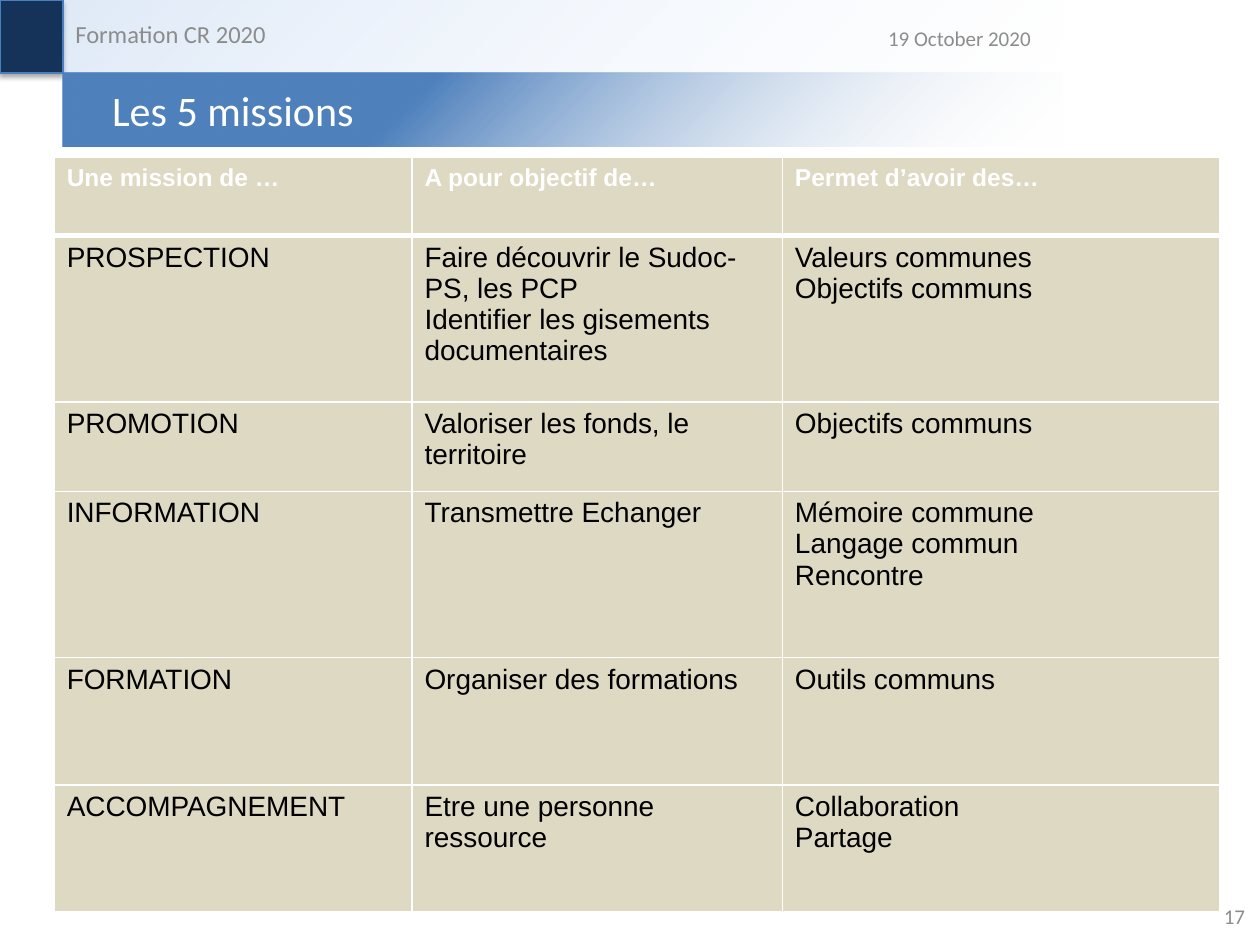
from dataclasses import dataclass

from pptx import Presentation
from pptx.dml.color import RGBColor
from pptx.enum.shapes import MSO_SHAPE
from pptx.enum.text import MSO_ANCHOR, PP_ALIGN
from pptx.oxml import parse_xml
from pptx.oxml.ns import nsdecls, qn
from pptx.util import Inches, Pt


@dataclass(frozen=True)
class Theme:
    heading_font: str = "Calibri"
    table_font: str = "Arial"
    white: str = "FFFFFF"
    black: str = "000000"
    grey: str = "8C8C8C"
    navy: str = "153258"
    outline: str = "4B7EBC"
    sand: str = "DDD9C3"
    title_size: int = 24
    body_size: int = 16
    label_size: int = 14
    small_size: int = 12


THEME = Theme()
BANNER_STOPS = [(0, "A4C4FF", 0), (100, "3F80CE", 17)]
TITLE_STOPS = [(0, "FFFFFF", 0), (65, "4F81BD", 100)]

TITLE = "Les 5 missions"
LABELS = [
    ("19 October 2020", (6.67, 0.1, 1.61, 0.4), THEME.small_size, PP_ALIGN.RIGHT),
    ("Formation CR 2020", (0.5, 0, 4.77, 0.54), THEME.label_size, PP_ALIGN.LEFT),
    ("17", (9.5, 7.07, 0.48, 0.4), THEME.small_size, PP_ALIGN.RIGHT),
]
MISSIONS = [
    ("Une mission de …", "A pour objectif de…", "Permet d’avoir des…"),
    ("PROSPECTION",
     "Faire découvrir le Sudoc-PS, les PCP\nIdentifier les gisements documentaires",
     "Valeurs communes\nObjectifs communs"),
    ("PROMOTION", "Valoriser les fonds, le territoire", "Objectifs communs"),
    ("INFORMATION", "Transmettre Echanger",
     "Mémoire commune\nLangage commun\nRencontre"),
    ("FORMATION", "Organiser des formations", "Outils communs"),
    ("ACCOMPAGNEMENT", "Etre une personne ressource", "Collaboration\nPartage"),
]
COLUMN_WIDTHS = [2.84, 2.94, 3.47]
ROW_HEIGHTS = [0.62, 1.32, 0.71, 1.32, 1.01, 1.01]
BAND_LEFT, BAND_WIDTH, BAND_HEIGHT = 0.5, 7.93, 0.58


def style(paragraph, font_name, size, color, bold=False):
    font = paragraph.font
    font.name, font.size, font.bold = font_name, Pt(size), bold
    font.color.rgb = RGBColor.from_string(color)


def add_rectangle(slide, left, top, width, height):
    rectangle = slide.shapes.add_shape(
        MSO_SHAPE.RECTANGLE, *map(Inches, (left, top, width, height)))
    rectangle.shadow.inherit = False
    rectangle.line.fill.background()
    return rectangle


def add_gradient_band(slide, top, stops):
    band = add_rectangle(slide, BAND_LEFT, top, BAND_WIDTH, BAND_HEIGHT)
    band.fill.background()
    stop_xml = "".join(
        f'<a:gs pos="{position * 1000}"><a:srgbClr val="{color}">'
        f'<a:alpha val="{opacity * 1000}"/></a:srgbClr></a:gs>'
        for position, color, opacity in stops)
    gradient = parse_xml(
        f'<a:gradFill {nsdecls("a")} rotWithShape="1"><a:gsLst>{stop_xml}</a:gsLst>'
        '<a:path path="circle"><a:fillToRect l="100000" t="100000"/></a:path>'
        '</a:gradFill>')
    properties = band._element.spPr
    properties.replace(properties.find(qn("a:noFill")), gradient)
    return band


def add_corner(slide):
    corner = add_rectangle(slide, 0, 0, BAND_LEFT, BAND_HEIGHT)
    corner.fill.solid()
    corner.fill.fore_color.rgb = RGBColor.from_string(THEME.navy)
    corner.line.color.rgb = RGBColor.from_string(THEME.outline)
    corner.line.width = Pt(0.75)
    corner._element.spPr.find(qn("a:effectLst")).append(parse_xml(
        f'<a:outerShdw {nsdecls("a")} blurRad="{Pt(3.1)}" dist="{Pt(1.8)}" '
        f'dir="5400000" rotWithShape="0"><a:srgbClr val="{THEME.black}">'
        '<a:alpha val="35000"/></a:srgbClr></a:outerShdw>'))


def add_title(slide):
    frame = add_gradient_band(slide, BAND_HEIGHT, TITLE_STOPS).text_frame
    frame.margin_left = Inches(0.39)
    frame.vertical_anchor = MSO_ANCHOR.MIDDLE
    frame.text = TITLE
    frame.paragraphs[0].alignment = PP_ALIGN.LEFT
    style(frame.paragraphs[0], THEME.heading_font, THEME.title_size, THEME.white)


def add_label(slide, text, box, size, alignment):
    frame = slide.shapes.add_textbox(*map(Inches, box)).text_frame
    frame.word_wrap = True
    frame.vertical_anchor = MSO_ANCHOR.MIDDLE
    frame.text = text
    frame.paragraphs[0].alignment = alignment
    style(frame.paragraphs[0], THEME.heading_font, size, THEME.grey)


def set_borders(cell, top, bottom):
    properties = cell._tc.get_or_add_tcPr()
    for index, (side, width) in enumerate(
            [("L", 1), ("R", 1), ("T", top), ("B", bottom)]):
        properties.insert(index, parse_xml(
            f'<a:ln{side} {nsdecls("a")} w="{Pt(width)}"><a:solidFill>'
            f'<a:srgbClr val="{THEME.white}"/></a:solidFill></a:ln{side}>'))


def add_missions(slide):
    table = slide.shapes.add_table(
        len(MISSIONS), len(COLUMN_WIDTHS), Inches(0.43), Inches(1.25),
        Inches(sum(COLUMN_WIDTHS)), Inches(sum(ROW_HEIGHTS))).table
    for column, width in zip(table.columns, COLUMN_WIDTHS):
        column.width = Inches(width)
    for row, height in zip(table.rows, ROW_HEIGHTS):
        row.height = Inches(height)
    for row_index, mission in enumerate(MISSIONS):
        is_header = row_index == 0
        size = THEME.label_size if is_header else THEME.body_size
        color = THEME.white if is_header else THEME.black
        for column_index, text in enumerate(mission):
            cell = table.cell(row_index, column_index)
            cell.text = text
            cell.fill.solid()
            cell.fill.fore_color.rgb = RGBColor.from_string(THEME.sand)
            set_borders(cell, 3 if row_index == 1 else 1, 3 if is_header else 1)
            for paragraph in cell.text_frame.paragraphs:
                style(paragraph, THEME.table_font, size, color, is_header)


def main():
    presentation = Presentation()
    presentation.slide_width, presentation.slide_height = Inches(10), Inches(7.5)
    slide = presentation.slides.add_slide(presentation.slide_layouts[6])
    add_corner(slide)
    add_gradient_band(slide, 0, BANNER_STOPS)
    add_title(slide)
    for label in LABELS:
        add_label(slide, *label)
    add_missions(slide)
    presentation.save("out.pptx")


if __name__ == "__main__":
    main()
